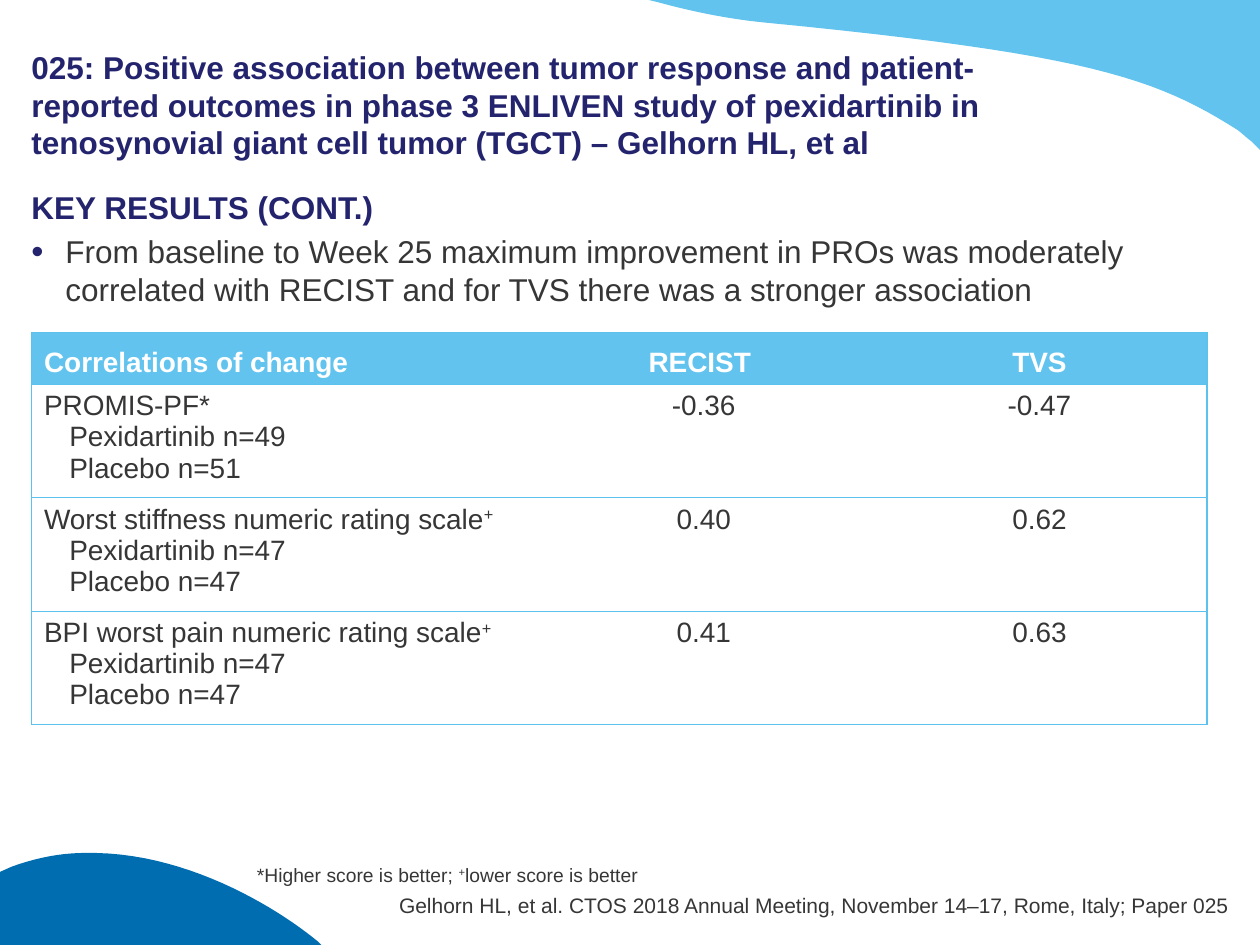
from lxml.etree import SubElement
from pptx import Presentation
from pptx.dml.color import RGBColor
from pptx.enum.text import MSO_ANCHOR, PP_ALIGN
from pptx.oxml.ns import qn
from pptx.util import Inches, Pt

COLORS = {
    "sky": "62C4EE",
    "ocean": "006DB0",
    "navy": "23246D",
    "text": "363636",
    "white": "FFFFFF",
    "rule": "5CC1EC",
}
FONT = "Arial"
WIDTH, HEIGHT = 10, 7.5
MARGIN = 0.025 * WIDTH
COLUMNS = (4, 2.67, 2.66)
HEADER_HEIGHT, ROW_HEIGHT = 0.41, 0.9
CURVE_STEPS = 24

# Outlines: two numbers are a line's end, six are a Bézier curve.
TOP_WAVE = [(5.15, 0), (10, 0), (10, 1.19), (9.93, 1.12),
            (9.89, 1.09, 9.86, 1.06, 9.82, 1.03),
            (9.17, 0.62, 8.64, 0.43, 6.08, 0.18),
            (5.77, 0.15, 5.49, 0.09, 5.23, 0.02)]
BOTTOM_HILL = [(0.67, 6.77), (1.45, 6.75, 2.18, 7.19, 2.52, 7.47),
               (2.55, 7.5), (0, 7.5), (0, 6.92), (0.09, 6.88),
               (0.28, 6.81, 0.48, 6.77, 0.67, 6.77)]

HEADINGS = ("Correlations of change", "RECIST ", "TVS")
MEASURES = [
    ("PROMIS-PF*", "", 49, 51, "-0.36", "-0.47"),
    ("Worst stiffness numeric rating scale", "+", 47, 47, "0.40", "0.62"),
    ("BPI worst pain numeric rating scale", "+", 47, 47, "0.41", "0.63"),
]


def rgb(name):
    return RGBColor.from_string(COLORS[name])


def curve_points(start, curve):
    """Sample a cubic Bézier curve, leaving out its start."""
    nodes = (start, curve[:2], curve[2:4], curve[4:])
    for step in range(1, CURVE_STEPS + 1):
        t = step / CURVE_STEPS
        weights = ((1 - t) ** 3, 3 * t * (1 - t) ** 2, 3 * t * t * (1 - t), t ** 3)
        yield tuple(sum(w * node[axis] for w, node in zip(weights, nodes))
                    for axis in (0, 1))


def add_wave(slide, outline, color):
    points = [outline[0]]
    for segment in outline[1:]:
        if len(segment) == 2:
            points.append(segment)
        else:
            points.extend(curve_points(points[-1], segment))
    # The builder rounds to whole units, so the points are given in EMU.
    start, *rest = [(Inches(x), Inches(y)) for x, y in points]
    builder = slide.shapes.build_freeform(*start, scale=1.0)
    builder.add_line_segments(rest, close=True)
    wave = builder.convert_to_shape()
    wave.shadow.inherit = False
    wave.fill.solid()
    wave.fill.fore_color.rgb = rgb(color)
    wave.line.fill.background()


def style(paragraph, size, color="text", bold=False, align=PP_ALIGN.LEFT):
    paragraph.font.name = FONT
    paragraph.font.size = Pt(size)
    paragraph.font.bold = bold
    paragraph.font.color.rgb = rgb(color)
    paragraph.alignment = align


def add_superscript(paragraph, mark):
    run = paragraph.add_run()
    run.text = mark
    run.font._element.set("baseline", "30000")


def add_text_frame(slide, box, insets, anchor=MSO_ANCHOR.TOP, wrap=True):
    frame = slide.shapes.add_textbox(*map(Inches, box)).text_frame
    frame.word_wrap = wrap
    frame.vertical_anchor = anchor
    (frame.margin_left, frame.margin_top,
     frame.margin_right, frame.margin_bottom) = map(Inches, insets)
    return frame


def set_bullet(paragraph, color, indent):
    properties = paragraph._p.get_or_add_pPr()
    properties.set("marL", str(Inches(indent)))
    properties.set("indent", str(-Inches(indent)))
    bullet_color = SubElement(properties, qn("a:buClr"))
    SubElement(bullet_color, qn("a:srgbClr"), val=COLORS[color])
    SubElement(properties, qn("a:buSzPct"), val="110000")
    SubElement(properties, qn("a:buFont"), typeface=FONT)
    SubElement(properties, qn("a:buChar"), char="•")


def add_title(slide):
    frame = add_text_frame(slide, (MARGIN, 0.25, 0.84 * WIDTH, 1.03),
                           (0, 0.05, 0, 0), MSO_ANCHOR.BOTTOM)
    title = frame.paragraphs[0]
    title.text = ("025: Positive association between tumor response and "
                  "patient-reported outcomes in phase 3 ENLIVEN study of "
                  "pexidartinib in tenosynovial giant cell tumor (TGCT) – "
                  "Gelhorn HL, et al")
    style(title, 18, "navy", bold=True)


def add_key_results(slide):
    frame = add_text_frame(slide, (MARGIN, 1.44, 0.95 * WIDTH, 1.1),
                           (0, 0.05, 0, 0.05))
    heading, finding = frame.paragraphs[0], frame.add_paragraph()
    heading.text = "KEY RESULTS (CONT.)"
    style(heading, 18, "navy", bold=True)
    finding.text = ("From baseline to Week 25 maximum improvement in PROs was "
                    "moderately correlated with RECIST and for TVS there was a "
                    "stronger association")
    style(finding, 18)
    for paragraph in (heading, finding):
        paragraph.space_after = Pt(4)
    set_bullet(finding, "navy", 0.27)


def set_borders(cell, sides):
    """Rule the given sides of a cell and clear the others."""
    properties = cell._tc.get_or_add_tcPr()
    for position, side in enumerate("LRTB"):
        line = properties.makeelement(qn(f"a:ln{side}"), {"w": str(Pt(0.75))})
        properties.insert(position, line)
        if side in sides:
            fill = SubElement(line, qn("a:solidFill"))
            SubElement(fill, qn("a:srgbClr"), val=COLORS["rule"])
        else:
            SubElement(line, qn("a:noFill"))


def fill_measure(cell, measure, mark, treated, placebo):
    name = cell.text_frame.paragraphs[0]
    name.text = measure
    if mark:
        add_superscript(name, mark)
    style(name, 16)
    for group in (f"Pexidartinib n={treated}", f"Placebo n={placebo}"):
        paragraph = cell.text_frame.add_paragraph()
        paragraph.text = group
        style(paragraph, 16)
        paragraph._p.get_or_add_pPr().set("marL", str(Inches(0.2)))


def fill_centered(cell, text, **font):
    paragraph = cell.text_frame.paragraphs[0]
    paragraph.text = text
    style(paragraph, 16, align=PP_ALIGN.CENTER, **font)


def add_correlations(slide):
    heights = [HEADER_HEIGHT] + [ROW_HEIGHT] * len(MEASURES)
    box = (MARGIN, 2.64, sum(COLUMNS), sum(heights))
    table = slide.shapes.add_table(len(heights), len(COLUMNS),
                                   *map(Inches, box)).table
    for column, width in zip(table.columns, COLUMNS):
        column.width = Inches(width)
    for row, height in zip(table.rows, heights):
        row.height = Inches(height)

    for column, heading in enumerate(HEADINGS):
        cell = table.cell(0, column)
        fill_centered(cell, heading, color="white", bold=True)
        cell.vertical_anchor = MSO_ANCHOR.BOTTOM
    table.cell(0, 0).text_frame.paragraphs[0].alignment = PP_ALIGN.LEFT

    for row, (*measure, recist, tvs) in enumerate(MEASURES, start=1):
        fill_measure(table.cell(row, 0), *measure)
        fill_centered(table.cell(row, 1), recist)
        fill_centered(table.cell(row, 2), tvs)

    outer_sides = {0: "L", len(COLUMNS) - 1: "R"}
    for row in range(len(heights)):
        for column in range(len(COLUMNS)):
            cell = table.cell(row, column)
            cell.fill.solid()
            cell.fill.fore_color.rgb = rgb("white" if row else "sky")
            set_borders(cell, "TB" + outer_sides.get(column, ""))


def add_footnote(slide):
    frame = add_text_frame(slide, (1.94, 6.8, 3.28, 0.29),
                           (0.1, 0.05, 0.1, 0.05), wrap=False)
    note = frame.paragraphs[0]
    note.text = "*Higher score is better; "
    add_superscript(note, "+")
    note.add_run().text = "lower score is better"
    style(note, 11)


def add_citation(slide):
    frame = add_text_frame(slide, (3.04, 7.08, 6.72, 0.2), (0, 0, 0, 0),
                           MSO_ANCHOR.BOTTOM, wrap=False)
    citation = frame.paragraphs[0]
    citation.text = ("Gelhorn HL, et al. CTOS 2018 Annual Meeting, "
                     "November 14–17, Rome, Italy; Paper 025")
    style(citation, 12, align=PP_ALIGN.RIGHT)


def main():
    deck = Presentation()
    deck.slide_width, deck.slide_height = Inches(WIDTH), Inches(HEIGHT)
    slide = deck.slides.add_slide(deck.slide_layouts[6])
    add_wave(slide, TOP_WAVE, "sky")
    add_wave(slide, BOTTOM_HILL, "ocean")
    for add_part in (add_title, add_key_results, add_correlations,
                     add_footnote, add_citation):
        add_part(slide)
    deck.save("out.pptx")


if __name__ == "__main__":
    main()
